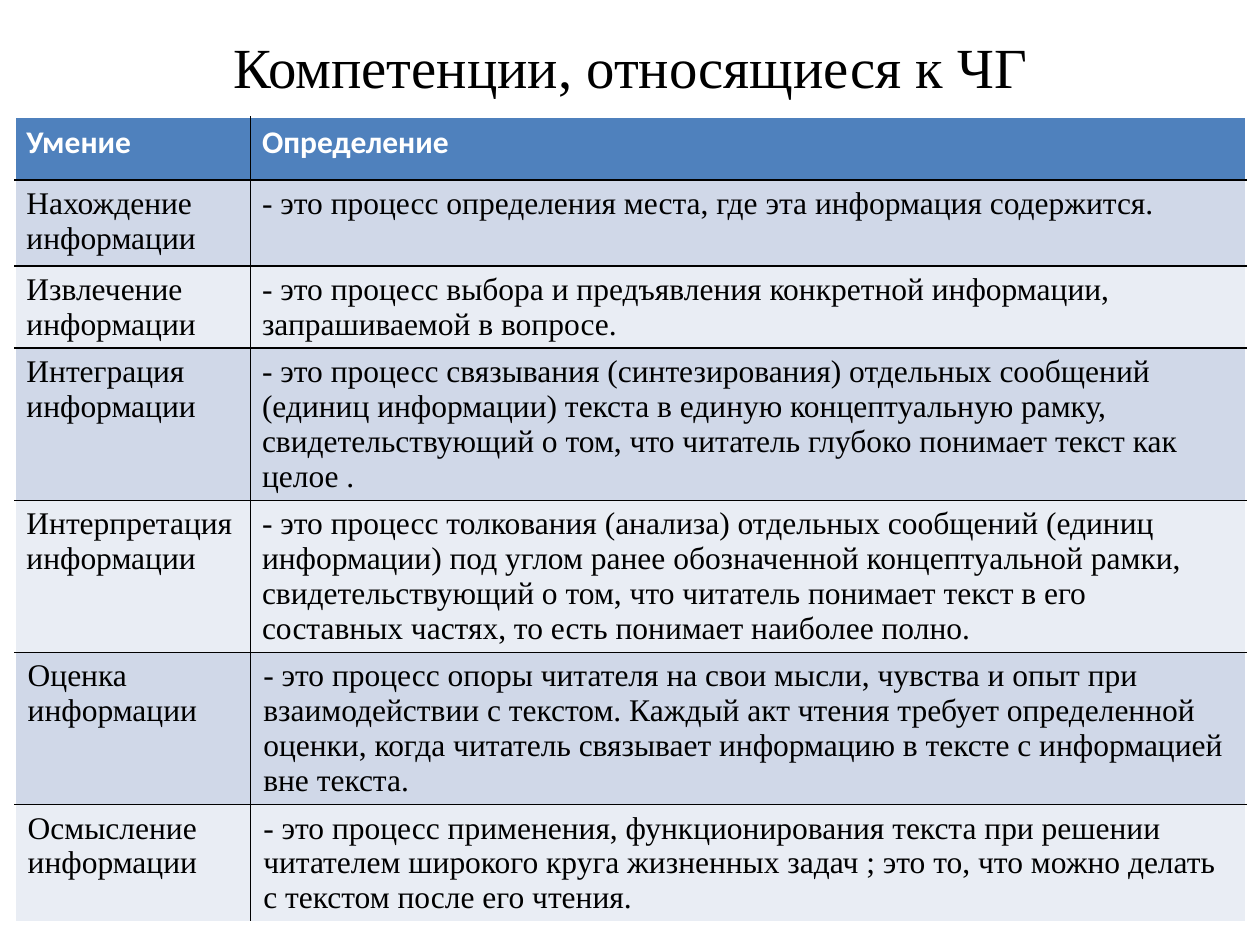
from lxml.etree import SubElement
from pptx import Presentation
from pptx.dml.color import RGBColor as RGB
from pptx.enum.text import MSO_ANCHOR as Anchor, MSO_AUTO_SIZE as AutoSize, PP_ALIGN as Align
from pptx.oxml.ns import qn
from pptx.util import Inches, Pt

COLORS = {
    "ink": "000000",
    "paper": "FFFFFF",
    "header": "4F81BD",
    "odd": "D0D8E8",
    "even": "E9EDF4",
}
SERIF, SANS = "Times New Roman", "Calibri"
HEADER = ("Умение", "Определение")
SKILLS = [
    ("Нахождение информации",
     "- это процесс определения места, где эта информация содержится."),
    ("Извлечение информации",
     "- это процесс выбора и предъявления конкретной информации, запрашиваемой в вопросе."),
    ("Интеграция информации",
     "- это процесс связывания (синтезирования) отдельных сообщений (единиц информации) "
     "текста в единую концептуальную рамку, свидетельствующий о том, что читатель глубоко "
     "понимает текст как целое ."),
    ("Интерпретация информации",
     "- это процесс толкования (анализа) отдельных сообщений (единиц информации) под углом "
     "ранее обозначенной концептуальной рамки, свидетельствующий о том, что читатель понимает "
     "текст в его составных частях, то есть понимает наиболее полно."),
    ("Оценка информации",
     "- это процесс опоры читателя на свои мысли, чувства и опыт при взаимодействии с текстом. "
     "Каждый акт чтения требует определенной оценки, когда читатель связывает информацию "
     "в тексте с информацией вне текста."),
    ("Осмысление информации",
     "- это процесс применения, функционирования текста при решении читателем широкого круга "
     "жизненных задач ; это то, что можно делать с текстом после его чтения."),
]
COLUMN_WIDTHS = (1.87, 7.9)
ROW_HEIGHTS = (0.5, 0.68, 0.61, 1.17, 1.17, 0.63, 0.64)


def add_run(paragraph, text, size, font, color, bold=False):
    run = paragraph.add_run()
    run.text = text
    run.font.size, run.font.name, run.font.bold = Pt(size), font, bold
    run.font.color.rgb = RGB.from_string(COLORS[color])


def set_title(slide, text):
    title = slide.shapes.title
    title.left, title.top = Inches(0.28), Inches(0.21)
    title.width, title.height = Inches(9.45), Inches(0.63)
    frame = title.text_frame
    frame.word_wrap, frame.auto_size = True, AutoSize.NONE
    frame.vertical_anchor = Anchor.MIDDLE
    frame.paragraphs[0].alignment = Align.CENTER
    add_run(frame.paragraphs[0], text, 32.4, SERIF, "ink")


def set_borders(cell, **sides):
    """Draw 1 pt cell borders; they must come before the fill in the XML."""
    properties = cell._tc.get_or_add_tcPr()
    for index, (side, color) in enumerate(sides.items()):
        line = SubElement(properties, qn(f"a:{side}"), w=str(Pt(1)))
        fill = SubElement(line, qn("a:solidFill"))
        SubElement(fill, qn("a:srgbClr"), val=COLORS[color])
        properties.insert(index, line)


def fill_cell(cell, text, row, column):
    is_header, is_last = row == 0, row == len(SKILLS)
    fill = "header" if is_header else "odd" if row % 2 else "even"
    cell.fill.solid()
    cell.fill.fore_color.rgb = RGB.from_string(COLORS[fill])

    # Black rules inside the table, white ones around it
    set_borders(cell,
                lnL="ink" if column else "paper",
                lnR="paper" if column else "ink",
                lnT="paper" if is_header else "ink",
                lnB="paper" if is_last else "ink")

    side_margin = 0.09 if row < 5 else 0.1
    cell.margin_left = cell.margin_right = Inches(side_margin)
    cell.margin_top = cell.margin_bottom = Inches(0.05)
    add_run(cell.text_frame.paragraphs[0], text, 18, SANS if is_header else SERIF,
            "paper" if is_header else "ink", bold=is_header)


def add_skill_table(slide):
    rows = [HEADER, *SKILLS]
    table = slide.shapes.add_table(
        len(rows), len(HEADER), Inches(0.12), Inches(0.93),
        Inches(sum(COLUMN_WIDTHS)), Inches(sum(ROW_HEIGHTS))).table
    for column, width in zip(table.columns, COLUMN_WIDTHS):
        column.width = Inches(width)
    for row, height in zip(table.rows, ROW_HEIGHTS):
        row.height = Inches(height)
    for r, texts in enumerate(rows):
        for c, text in enumerate(texts):
            fill_cell(table.cell(r, c), text, r, c)


def main():
    deck = Presentation()
    deck.slide_width, deck.slide_height = Inches(10), Inches(7.5)
    slide = deck.slides.add_slide(deck.slide_layouts[5])  # title only
    set_title(slide, "Компетенции, относящиеся к ЧГ")
    add_skill_table(slide)
    deck.save("out.pptx")


if __name__ == "__main__":
    main()
